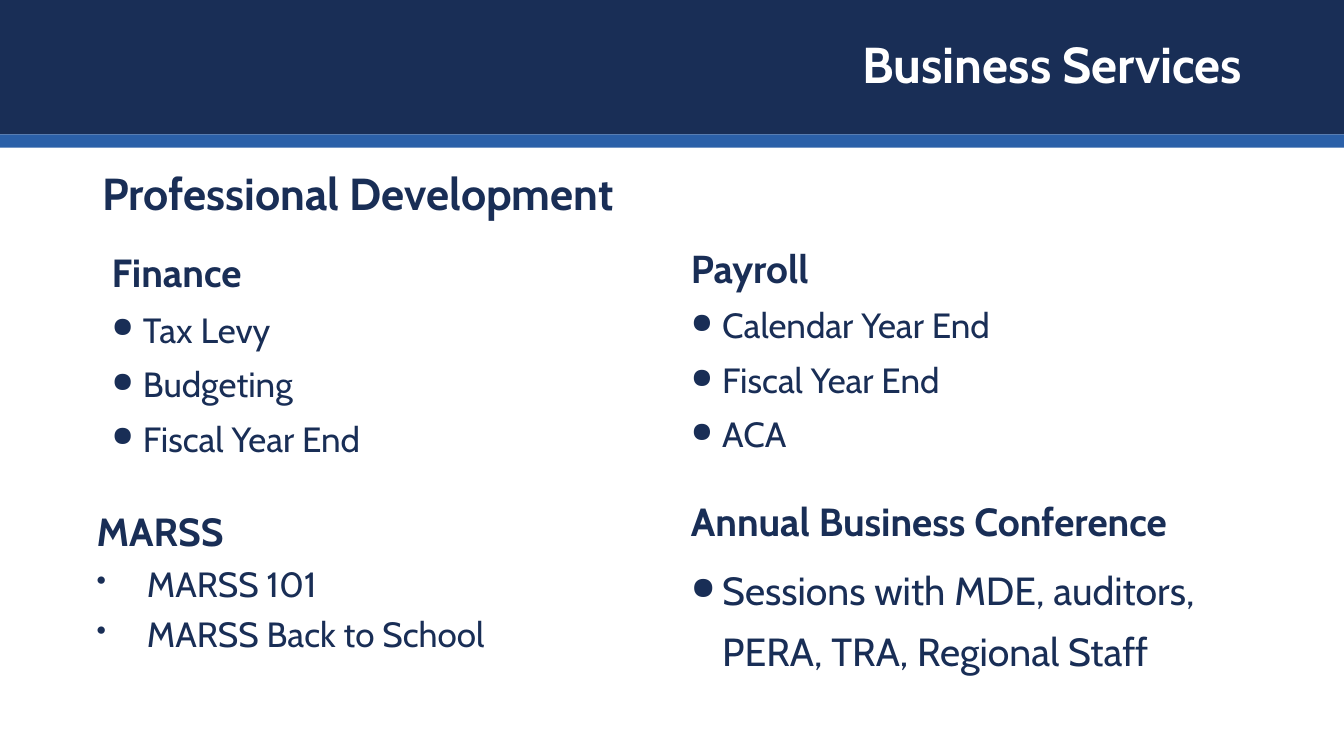
"""Build the Business Services professional development slide."""
from lxml import etree
from pptx import Presentation
from pptx import util as u
from pptx.dml.color import RGBColor
from pptx.enum import shapes, text
from pptx.oxml import ns

NAVY = RGBColor(0x19, 0x2E, 0x56)
BLUE = RGBColor(0x2B, 0x60, 0xA8)
WHITE = RGBColor(0xFF, 0xFF, 0xFF)
FONT = "Cabin"
SLIDE_WIDTH, SLIDE_HEIGHT = 960, 540
HEADING_INDENT = 6.5

BANDS = [(0, 96, NAVY), (96, 9.5, BLUE)]
TITLE = "Business Services"
SUBTITLE = "Professional Development"

DISC = {"bullet": "●", "indent": 28.8, "hang": 22.3}
DOT = {"bullet": "•", "indent": 42.5, "hang": 36}
TOPICS = [
    {"heading": "Finance", "items": ["Tax Levy", "Budgeting", "Fiscal Year End"],
     "box": (66.2, 170.6, 828, 342.7), "card": False, "style": DISC,
     "heading_size": 28, "item_size": 25, "spacing": (1.1, 1.1)},
    {"heading": "Payroll", "items": ["Calendar Year End", "Fiscal Year End", "ACA"],
     "box": (480, 167.8, 408, 170), "card": False, "style": DISC,
     "heading_size": 27.8, "item_size": 25, "spacing": (1.1, 1.1)},
    {"heading": "MARSS", "items": ["MARSS 101", "MARSS Back to School"],
     "box": (55.4, 358.6, 408, 169.2), "card": True, "style": DOT,
     "heading_size": 28, "item_size": 25, "spacing": (1, 1)},
    {"heading": "Annual Business Conference",
     "items": ["Sessions with MDE, auditors, PERA, TRA, Regional Staff"],
     "box": (480, 351.4, 408, 169.2), "card": True, "style": DISC,
     "heading_size": 28, "item_size": 28, "spacing": (1, 1.3)},
]


def points(box):
    return [u.Pt(length) for length in box]


def add_rectangle(slide, box, color):
    rectangle = slide.shapes.add_shape(shapes.MSO_SHAPE.RECTANGLE, *points(box))
    rectangle.shadow.inherit = False
    rectangle.fill.solid()
    rectangle.fill.fore_color.rgb = color
    rectangle.line.fill.background()
    return rectangle


def prepare_frame(holder, anchor=text.MSO_ANCHOR.TOP):
    frame = holder.text_frame
    frame.word_wrap = True
    frame.vertical_anchor = anchor
    return frame


def write(paragraph, words, size, color=NAVY, bold=True,
          align=text.PP_ALIGN.LEFT, spacing=1):
    paragraph.alignment = align
    paragraph.line_spacing = spacing
    run = paragraph.add_run()
    run.text = words
    run.font.name = FONT
    run.font.size = u.Pt(size)
    run.font.bold = bold
    run.font.color.rgb = color


def indent(paragraph, left, hang=0, bullet=None):
    properties = paragraph._p.get_or_add_pPr()
    properties.set("marL", str(u.Pt(left)))
    properties.set("indent", str(-u.Pt(hang)))
    if bullet:
        etree.SubElement(properties, ns.qn("a:buSzPct"), val="80000")
        etree.SubElement(properties, ns.qn("a:buChar"), char=bullet)


def add_topic(slide, topic):
    if topic["card"]:
        holder = add_rectangle(slide, topic["box"], WHITE)
    else:
        holder = slide.shapes.add_textbox(*points(topic["box"]))
    frame = prepare_frame(holder)
    heading_spacing, item_spacing = topic["spacing"]
    heading = frame.paragraphs[0]
    indent(heading, HEADING_INDENT)
    write(heading, topic["heading"], topic["heading_size"], spacing=heading_spacing)
    style = topic["style"]
    for words in topic["items"]:
        item = frame.add_paragraph()
        indent(item, style["indent"], style["hang"], style["bullet"])
        item.space_before = u.Pt(6)
        write(item, words, topic["item_size"], bold=False, spacing=item_spacing)


def main():
    deck = Presentation()
    deck.slide_width, deck.slide_height = points((SLIDE_WIDTH, SLIDE_HEIGHT))
    slide = deck.slides.add_slide(deck.slide_layouts[6])

    for top, height, color in BANDS:
        add_rectangle(slide, (0, top, SLIDE_WIDTH, height), color)

    title = slide.shapes.add_textbox(*points((66.2, 12.2, 828, 72)))
    title_frame = prepare_frame(title, text.MSO_ANCHOR.MIDDLE)
    write(title_frame.paragraphs[0], TITLE, 36, WHITE,
          align=text.PP_ALIGN.RIGHT, spacing=0.9)

    for topic in TOPICS:
        add_topic(slide, topic)

    subtitle = slide.shapes.add_textbox(*points((66.2, 114.5, 451.4, 46)))
    subtitle_frame = prepare_frame(subtitle)
    subtitle_frame.auto_size = text.MSO_AUTO_SIZE.SHAPE_TO_FIT_TEXT
    write(subtitle_frame.paragraphs[0], SUBTITLE, 32)

    deck.save("out.pptx")


if __name__ == "__main__":
    main()
